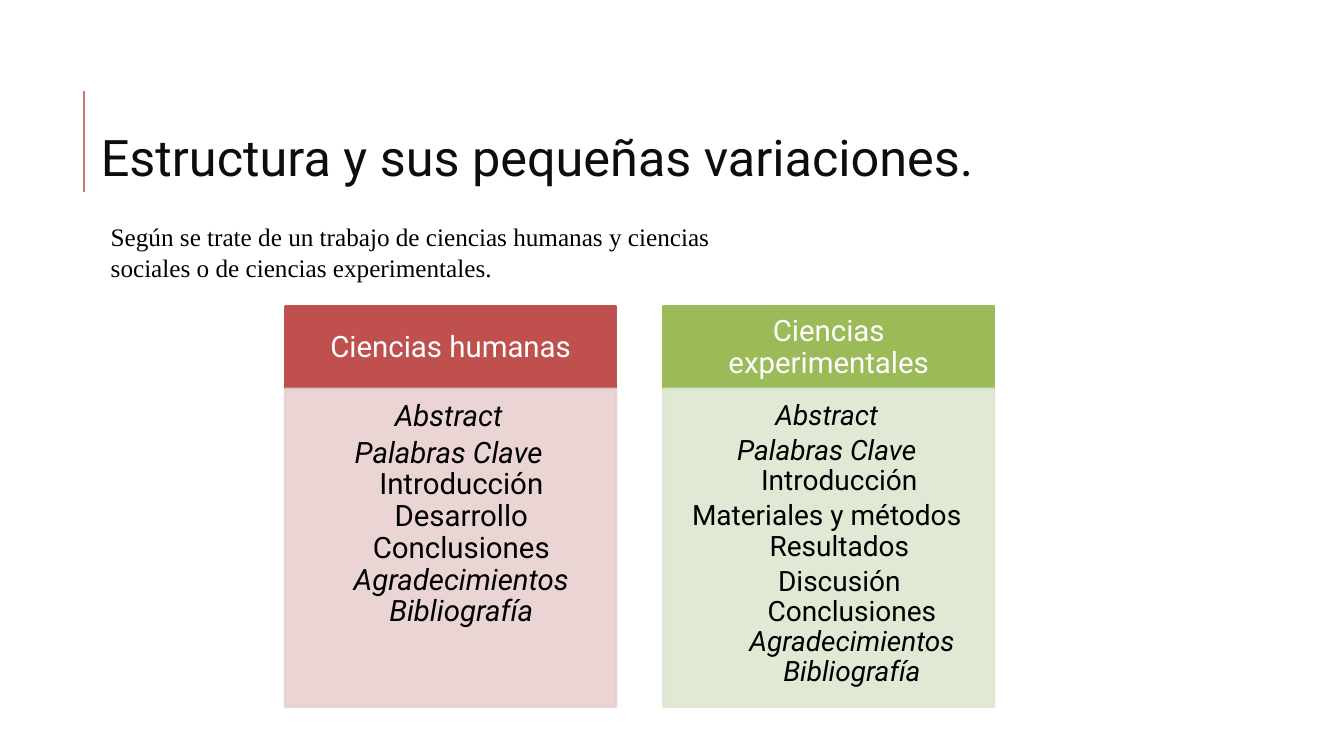
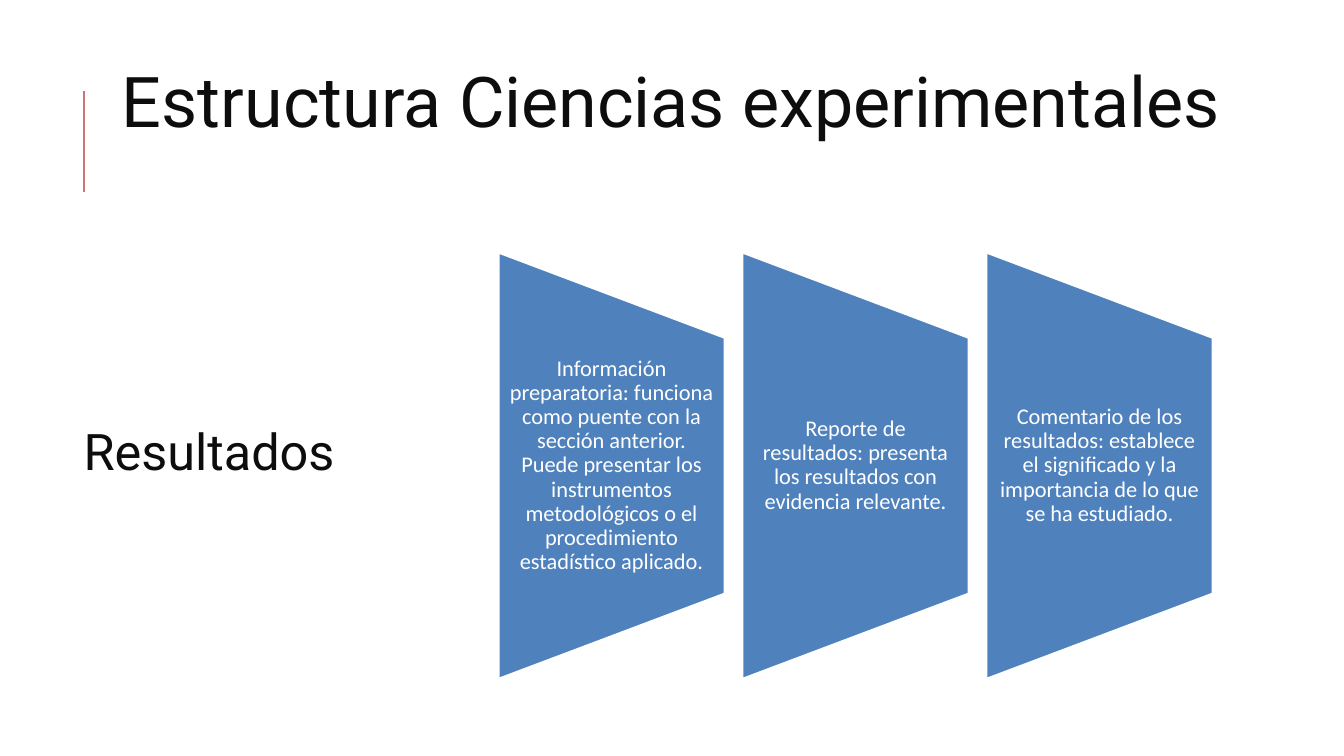
from dataclasses import dataclass

from lxml import etree
from pptx import Presentation
from pptx.dml.color import RGBColor
from pptx.enum.shapes import MSO_CONNECTOR, MSO_SHAPE
from pptx.enum.text import MSO_ANCHOR, MSO_AUTO_SIZE, PP_ALIGN
from pptx.oxml.ns import qn
from pptx.util import Inches, Pt

RECT = MSO_SHAPE.RECTANGLE
FUNNEL = MSO_SHAPE.FLOWCHART_MANUAL_OPERATION
STRAIGHT = MSO_CONNECTOR.STRAIGHT
TOP, MIDDLE = MSO_ANCHOR.TOP, MSO_ANCHOR.MIDDLE
LEFT, CENTER = PP_ALIGN.LEFT, PP_ALIGN.CENTER
TITLE_ONLY = 5


@dataclass(frozen=True)
class Theme:
    accent: str = "CA7678"
    title: str = "0D0D0D"
    text: str = "000000"
    white: str = "FFFFFF"
    red: str = "C0504D"
    red_tint: str = "E8D0D0"
    green: str = "9BBB59"
    green_tint: str = "DEE7D1"
    blue: str = "4F81BD"
    main_font: str = "Roboto"
    intro_font: str = "Times New Roman"
    step_font: str = "Calibri"
    banner_size: int = 50
    title_size: int = 36
    header_size: int = 21
    intro_size: int = 18
    step_size: int = 16


T = Theme()

HUMANITIES = [
    (1, [("Abstract", True)]),
    (1, [("Palabras Clave ", True),
         ("Introducción Desarrollo Conclusiones ", False),
         ("Agradecimientos Bibliografía", True)]),
]
EXPERIMENTAL = [
    (1, [("Abstract", True)]),
    (1, [("Palabras Clave ", True), ("Introducción", False)]),
    (1, [("Materiales y métodos Resultados", False)]),
    (2, [("Discusión Conclusiones ", False),
         ("Agradecimientos Bibliografía", True)]),
]
STEPS = [
    "Información preparatoria: funciona como puente con la sección anterior. "
    "Puede presentar los instrumentos metodológicos o el procedimiento "
    "estadístico aplicado.",
    "Reporte de resultados: presenta los resultados con evidencia relevante.",
    "Comentario de los resultados: establece el significado y la importancia "
    "de lo que se ha estudiado.",
]


def rgb(code):
    return RGBColor.from_string(code)


def inches(box):
    return [Inches(v) for v in box]


def style_run(r, font, size, color, italic=None):
    r.font.name, r.font.size, r.font.italic = font, Pt(size), italic
    r.font.color.rgb = rgb(color)


def set_frame(tf, insets, anchor):
    tf.word_wrap = True
    tf.auto_size = MSO_AUTO_SIZE.NONE
    tf.vertical_anchor = anchor
    (tf.margin_left, tf.margin_top,
     tf.margin_right, tf.margin_bottom) = inches(insets)


def set_text(shape, text, font, size, color, insets=(0, 0, 0, 0),
             anchor=TOP, align=LEFT, spacing=1.0):
    tf = shape.text_frame
    tf.text = text
    set_frame(tf, insets, anchor)
    p = tf.paragraphs[0]
    p.alignment, p.line_spacing = align, spacing
    style_run(p.runs[0], font, size, color)


def add_block(s, preset, box, fill, line, alpha=None):
    """Add a filled preset shape; alpha is its opacity in percent."""
    sp = s.shapes.add_shape(preset, *inches(box))
    sp.shadow.inherit = False
    sp.fill.solid()
    sp.fill.fore_color.rgb = rgb(fill)
    sp.line.color.rgb = rgb(line)
    sp.line.width = Pt(2)
    if alpha is not None:
        for clr in sp._element.spPr.iter(qn("a:srgbClr")):
            etree.SubElement(clr, qn("a:alpha"), val=str(alpha * 1000))
    return sp


def add_titled_slide(prs, title, box):
    s = prs.slides.add_slide(prs.slide_layouts[TITLE_ONLY])
    rule = s.shapes.add_connector(STRAIGHT, *inches((0.83, 1.9, 0.83, 0.9)))
    rule.line.color.rgb = rgb(T.accent)
    rule.line.width = Pt(1.5)
    etree.SubElement(rule._element.spPr, qn("a:effectLst"))
    sp = s.shapes.title
    sp.left, sp.top, sp.width, sp.height = inches(box)
    set_text(sp, title, T.main_font, T.title_size, T.title)
    return s


def add_column(s, box, header, sections, color, tint, size):
    x, y, w, h = box
    head_h = 0.82
    head = add_block(s, RECT, (x, y, w, head_h), color, color)
    set_text(head, header, T.main_font, T.header_size, T.white,
             (0.16, 0.09, 0.16, 0.09), MIDDLE, CENTER, 0.9)

    body = add_block(s, RECT, (x, y + head_h, w, h - head_h), tint, tint, 90)
    tf = body.text_frame
    set_frame(tf, (0.12, 0.12, 0.16, 0.18), TOP)
    for i, (level, parts) in enumerate(sections):
        p = tf.add_paragraph() if i else tf.paragraphs[0]
        p.level, p.alignment, p.line_spacing = level, CENTER, 0.9
        p.space_after = Pt(3.5)
        pPr = p._p.get_or_add_pPr()
        pPr.set("marL", str(Inches(0.25 * level)))
        pPr.set("indent", str(Inches(-0.25)))
        for text, italic in parts:
            r = p.add_run()
            r.text = text
            style_run(r, T.main_font, size, T.text, italic)


def add_step(s, box, text):
    """Add a funnel turned to narrow rightwards, with upright text over it."""
    x, y, w, h = box
    turned = (x + (w - h) / 2, y + (h - w) / 2, h, w)
    funnel = add_block(s, FUNNEL, turned, T.blue, T.white)
    funnel.rotation = 270
    label = s.shapes.add_textbox(*inches((x, y + h / 5, w, h * 3 / 5)))
    set_text(label, text, T.step_font, T.step_size, T.white,
             (0.11, 0, 0.11, 0), MIDDLE, CENTER, 0.9)


def build_variations(prs):
    s = add_titled_slide(prs, "Estructura y sus pequeñas variaciones.",
                         (1, 1.25, 10.92, 0.61))
    intro = s.shapes.add_textbox(*inches((1, 2.15, 6.67, 0.71)))
    set_text(intro, "Según se trate de un trabajo de ciencias humanas y "
             "ciencias sociales o de ciencias experimentales.",
             T.intro_font, T.intro_size, T.text, (0.1, 0.05, 0.1, 0.05))
    columns = [
        ("Ciencias humanas", HUMANITIES, T.red, T.red_tint, 21),
        ("Ciencias experimentales", EXPERIMENTAL, T.green, T.green_tint, 20),
    ]
    for i, column in enumerate(columns):
        add_column(s, (2.83 + 3.75 * i, 3.04, 3.28, 3.97), *column)


def build_results(prs):
    s = add_titled_slide(prs, "Resultados", (0.83, 4.17, 3.75, 0.61))
    banner = s.shapes.add_textbox(*inches((1.21, 0.57, 10.92, 2.52)))
    set_text(banner, "Estructura Ciencias experimentales",
             T.main_font, T.banner_size, T.title)
    for i, text in enumerate(STEPS):
        add_step(s, (4.94 + 2.42 * i, 2.5, 2.25, 4.24), text)


def main():
    prs = Presentation()
    prs.slide_width, prs.slide_height = Inches(13.33), Inches(7.5)
    build_variations(prs)
    build_results(prs)
    prs.save("out.pptx")


if __name__ == "__main__":
    main()
